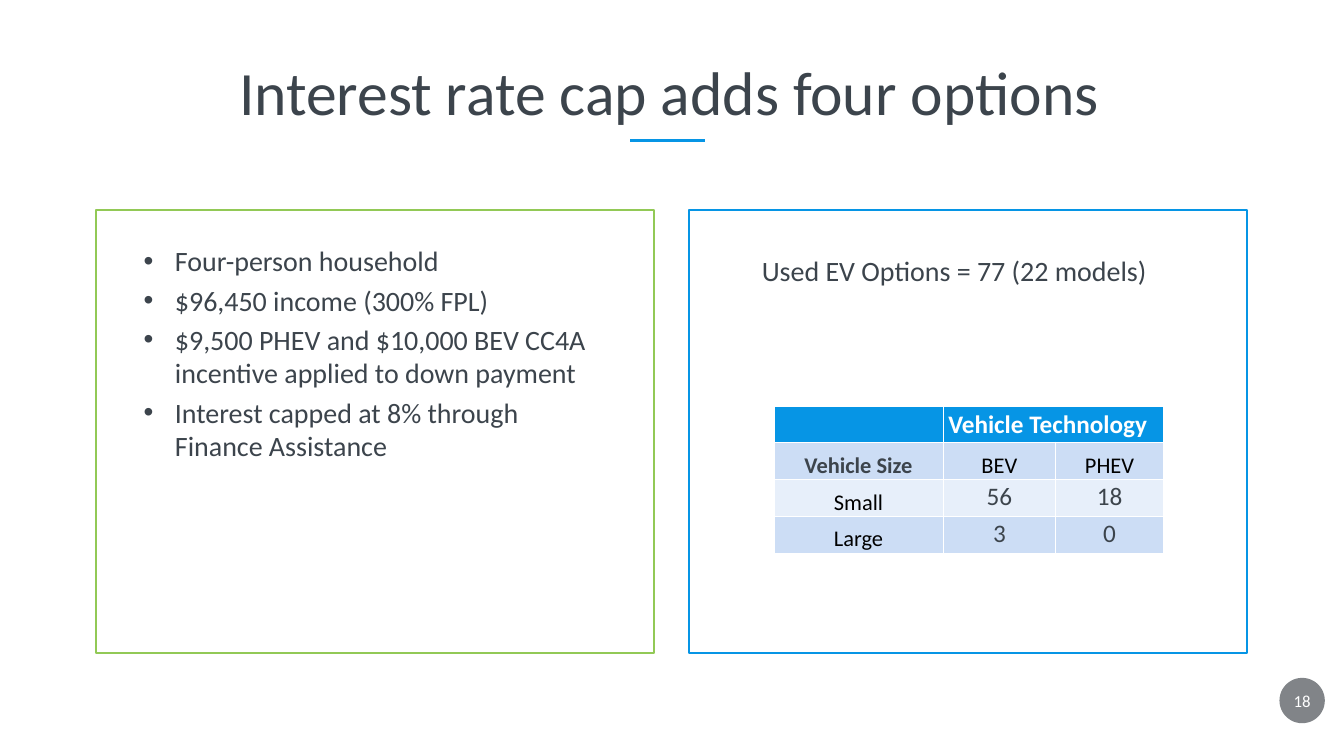
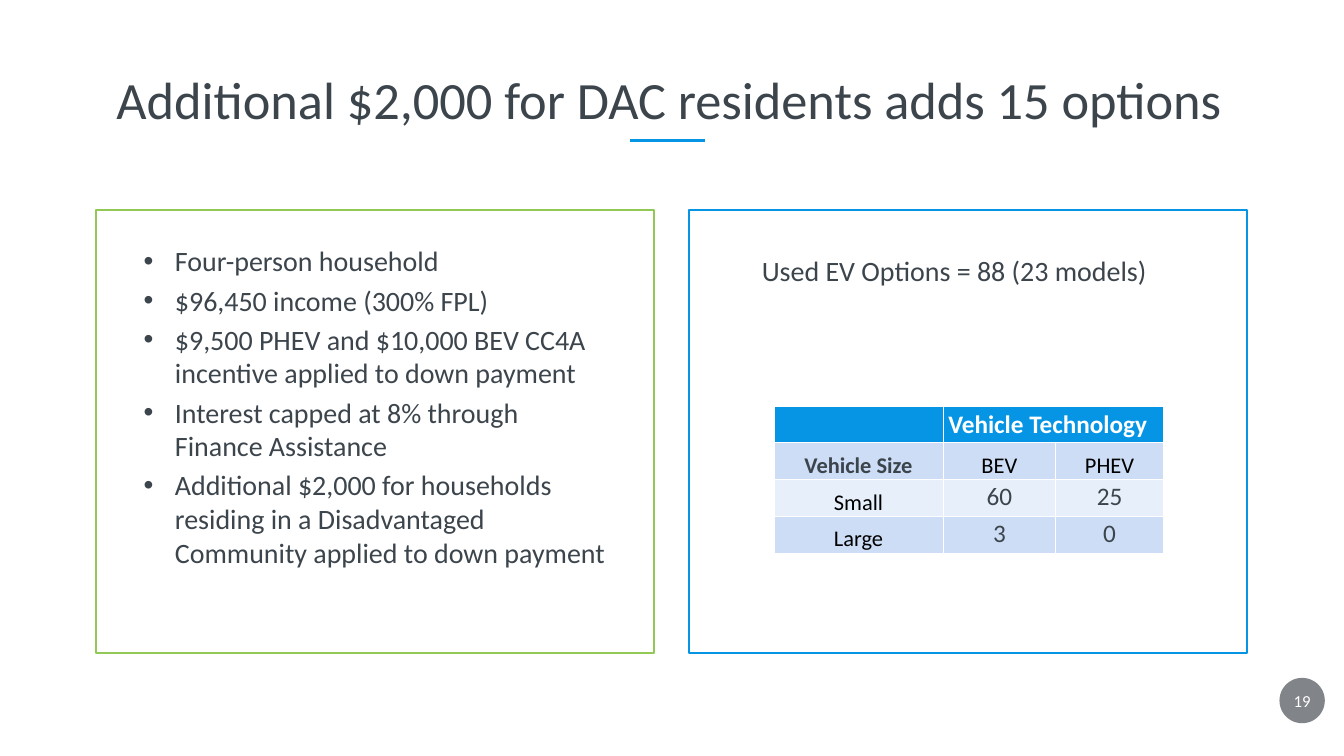
from dataclasses import dataclass
from lxml import etree
from pptx import Presentation
from pptx import util as u
from pptx.dml.color import RGBColor
from pptx.enum import shapes, text
from pptx.oxml.ns import qn


@dataclass(frozen=True)
class Theme:
    face: str = "Calibri"
    ink: str = "3C444C"
    black: str = "000000"
    white: str = "FFFFFF"
    blue: str = "0695E5"
    green: str = "92C956"
    badge: str = "2D3339"
    band: str = "CCDDF5"
    pale: str = "E7EFFA"
    body: float = 40
    head: float = 36
    label: float = 32
    page: float = 24


T = Theme()
MID = text.PP_ALIGN.CENTER
LOW = text.MSO_ANCHOR.BOTTOM
PAD = (0.1, 0.05, 0.1, 0.05)
WIDE = (0.24, 0.12, 0.24, 0.12)
TIGHT = (0.01, 0.01, 0.01, 0)
COLS = (3.36, 2.23, 2.14)
ROWS = (0.71, 0.73, 0.73, 0.73)

FACTS = [
    "Four-person household",
    "$96,450 income (300% FPL)",
    "$9,500 PHEV and $10,000 BEV CC4A incentive applied to down payment",
    "Interest capped at 8% through Finance Assistance",
]
EXTRA = ("Additional $2,000 for households residing in a Disadvantaged "
         "Community applied to down payment")


def apply(item, **form):
    for key, val in form.items():
        setattr(item, key, val)


def rgb(code):
    return RGBColor.from_string(code)


def box(area):
    return [u.Inches(n) for n in area]


def style(para, size, color, bold=False, **form):
    apply(para, **form)
    apply(para.font, name=T.face, size=u.Pt(size), bold=bold)
    para.font.color.rgb = rgb(color)


def inset(item, pad):
    sides = ("margin_left", "margin_top", "margin_right", "margin_bottom")
    apply(item, **dict(zip(sides, box(pad))))


def bullet(para):
    props = para._p.get_or_add_pPr()
    props.set("marL", str(u.Inches(0.62)))
    props.set("indent", str(-u.Inches(0.62)))
    font = etree.SubElement(props, qn("a:buFont"))
    font.set("typeface", "Arial")
    etree.SubElement(props, qn("a:buChar")).set("char", "•")


def write(slide, area, lines, size, color=T.ink, pad=PAD,
          anchor=text.MSO_ANCHOR.TOP, dots=False, **form):
    frame = slide.shapes.add_textbox(*box(area)).text_frame
    apply(frame, word_wrap=True, vertical_anchor=anchor)
    inset(frame, pad)
    for i, line in enumerate(lines):
        para = frame.add_paragraph() if i else frame.paragraphs[0]
        para.text = line
        if i:
            para.space_before = u.Pt(size * 0.2)
        if dots:
            bullet(para)
        style(para, size, color, **form)


def panel(slide, left, color):
    shape = slide.shapes.add_shape(
        shapes.MSO_SHAPE.RECTANGLE, *box((left, 4.17, 11.07, 8.78)))
    shape.shadow.inherit = False
    shape.fill.background()
    shape.line.color.rgb = rgb(color)
    shape.line.width = u.Pt(3)


def badge(slide, page):
    disc = slide.shapes.add_shape(
        shapes.MSO_SHAPE.OVAL, *box((25.38, 13.45, 0.9, 0.9)))
    disc.shadow.inherit = False
    disc.fill.solid()
    disc.fill.fore_color.rgb = rgb(T.badge)
    tone = disc._element.spPr.find(".//" + qn("a:srgbClr"))
    etree.SubElement(tone, qn("a:alpha")).set("val", "60000")
    disc.line.fill.background()
    write(slide, (25.38, 13.5, 0.9, 0.8), [str(page)], T.page, T.white,
          anchor=text.MSO_ANCHOR.MIDDLE, alignment=MID)


def rule(slide):
    line = slide.shapes.add_connector(
        shapes.MSO_CONNECTOR.STRAIGHT, *box((12.5, 2.79, 13.99, 2.79)))
    line.line.color.rgb = rgb(T.blue)
    line.line.width = u.Pt(3.6)
    etree.SubElement(line._element.spPr, qn("a:effectLst"))


def border(cell, top, low):
    props = cell._tc.get_or_add_tcPr()
    sides = {"lnL": 1, "lnR": 1, "lnT": top, "lnB": low}
    for i, (side, width) in enumerate(sides.items()):
        line = etree.Element(qn("a:" + side), w=str(u.Pt(width)))
        fill = etree.SubElement(line, qn("a:solidFill"))
        etree.SubElement(fill, qn("a:srgbClr")).set("val", T.white)
        props.insert(i, line)


def look(row, col):
    if row == 0:
        return dict(size=T.head, color=T.white, bold=True), False
    if row > 1 and col:
        return dict(size=T.head, color=T.ink, alignment=MID), False
    lead = row == 1 and col == 0
    return dict(size=T.label, color=T.ink if lead else T.black,
                bold=lead, alignment=MID), True


def grid(slide, small, large):
    data = [("", "Vehicle Technology", ""), ("Vehicle Size", "BEV", "PHEV"),
            ("Small", *small), ("Large", *large)]
    area = (15.35, 8.07, sum(COLS), sum(ROWS))
    table = slide.shapes.add_table(len(ROWS), len(COLS), *box(area)).table
    for col, width in zip(table.columns, COLS):
        col.width = u.Inches(width)
    for row, height in zip(table.rows, ROWS):
        row.height = u.Inches(height)
    fills = (T.blue, T.band, T.pale, T.band)
    for r, line in enumerate(data):
        for c, word in enumerate(line):
            cell = table.cell(r, c)
            form, label = look(r, c)
            cell.text = str(word)
            style(cell.text_frame.paragraphs[0], **form)
            inset(cell, TIGHT if label else PAD)
            if label:
                cell.vertical_anchor = LOW
            cell.fill.solid()
            cell.fill.fore_color.rgb = rgb(fills[r])
            border(cell, 3 if r == 1 else 1, 3 if r == 0 else 1)
    table.cell(0, 1).merge(table.cell(0, 2))


def build(deck, page, title, size, pitch, facts, count, small, large):
    slide = deck.slides.add_slide(deck.slide_layouts[6])
    rule(slide)
    panel(slide, 1.9, T.green)
    write(slide, (2.61, 4.72, 9.64, 5.49), facts, T.body, pad=WIDE, dots=True)
    badge(slide, page)
    write(slide, (1.5, 0.82, 23.54, 1.79), [title], size, anchor=LOW,
          alignment=MID, line_spacing=pitch)
    panel(slide, 13.67, T.blue)
    write(slide, (14.87, 4.91, 9.91, 0.91),
          [f"Used EV Options = {count} models)"], T.body, pad=WIDE)
    grid(slide, small, large)


def main():
    deck = Presentation()
    apply(deck, slide_width=u.Inches(26.66), slide_height=u.Inches(15))
    build(deck, 18, "Interest rate cap adds four options", 88, 0.9,
          FACTS, "77 (22", (56, 18), (3, 0))
    build(deck, 19, "Additional $2,000 for DAC residents adds 15 options",
          74.8, 0.8, FACTS + [EXTRA], "88 (23", (60, 25), (3, 0))
    deck.save("out.pptx")


if __name__ == "__main__":
    main()
